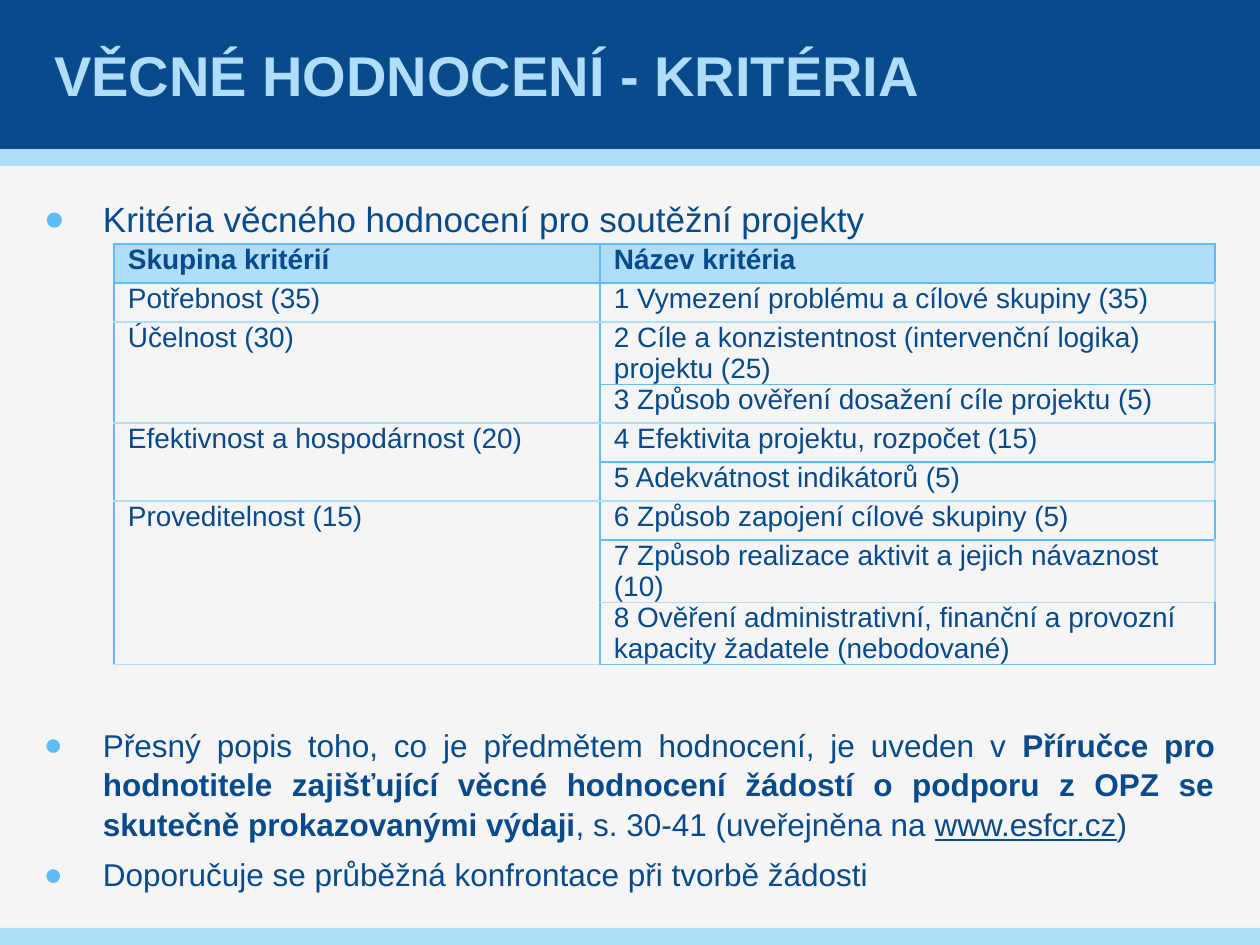
"""Build the slide that lists the evaluation criteria."""
from lxml import etree
from pptx import Presentation, util as u
from pptx.dml import color
from pptx.enum import shapes, text
from pptx.oxml import ns

NAVY, SKY, PALE, PAPER = "084A8B", "5FBBF5", "AFDDFA", "F5F5F5"
EMU_PER_PX = 914400 / 126
GROUPS = [
    ("Skupina kritérií", ["Název kritéria"]),
    ("Potřebnost (35)", ["1 Vymezení problému a cílové skupiny (35)"]),
    ("Účelnost (30)", ["2 Cíle a konzistentnost (intervenční logika) projektu (25)",
                       "3 Způsob ověření dosažení cíle projektu (5)"]),
    ("Efektivnost a hospodárnost (20)", ["4 Efektivita projektu, rozpočet (15)",
                                         "5 Adekvátnost indikátorů (5)"]),
    ("Proveditelnost (15)", ["6 Způsob zapojení cílové skupiny (5)",
                             "7 Způsob realizace aktivit a jejich návaznost (10)",
                             "8 Ověření administrativní, finanční a provozní "
                             "kapacity žadatele (nebodované)"]),
]
BULLETS = [
    (20, 0, text.PP_ALIGN.LEFT,
     [("Kritéria věcného hodnocení pro soutěžní projekty", {})]),
    (18, 274, text.PP_ALIGN.JUSTIFY,
     [("Přesný popis toho, co je předmětem hodnocení, je uveden v ", {}),
      ("Příručce pro hodnotitele zajišťující věcné hodnocení žádostí o podporu "
       "z OPZ se skutečně prokazovanými výdaji", {"bold": True}),
      (", s. 30-41 (uveřejněna na ", {}),
      ("www.esfcr.cz", {"underline": True}),
      (")", {})]),
    (18, 3, text.PP_ALIGN.JUSTIFY,
     [("Doporučuje se průběžná konfrontace při tvorbě žádosti", {})]),
]


def px(length):
    """Turn pixels into EMU."""
    return u.Emu(round(length * EMU_PER_PX))


def rgb(value):
    """Turn a hex string into a colour."""
    return color.RGBColor.from_string(value)


def apply(target, values):
    """Set each attribute named in a dict."""
    for name, value in values.items():
        setattr(target, name, value)


def place(shape, box):
    """Move and size a shape to a pixel box."""
    apply(shape, dict(zip(("left", "top", "width", "height"), map(px, box))))


def add_run(paragraph, words, size, colour=NAVY, **style):
    """Add a formatted run to a paragraph."""
    run = paragraph.add_run()
    run.text = words
    apply(run.font, {"name": "Arial", "size": u.Pt(size), **style})
    run.font.color.rgb = rgb(colour)


def set_frame(frame, sides, anchor):
    """Set wrapping, side insets and anchor of a text frame."""
    apply(frame, {"word_wrap": True, "auto_size": text.MSO_AUTO_SIZE.NONE,
                  "vertical_anchor": anchor, "margin_left": px(sides),
                  "margin_right": px(sides), "margin_top": 0, "margin_bottom": 0})


def add_band(slide, box, fill):
    """Add a plain coloured band."""
    band = slide.shapes.add_shape(shapes.MSO_SHAPE.RECTANGLE, *map(px, box))
    band.shadow.inherit = False
    band.fill.solid()
    band.fill.fore_color.rgb = rgb(fill)
    band.line.fill.background()


def add_header(slide, box):
    """Add the title bar, its stripe and the title."""
    left, top, width, height = box
    add_band(slide, (left, top + height, width, 17), PALE)
    add_band(slide, box, NAVY)
    title = slide.shapes.title
    slide.shapes._spTree.append(title._element)
    place(title, (left + 49, top, 1160, height))
    set_frame(title.text_frame, 5, text.MSO_ANCHOR.MIDDLE)
    paragraph = title.text_frame.paragraphs[0]
    paragraph.alignment = text.PP_ALIGN.LEFT
    add_run(paragraph, "VĚCNÉ HODNOCENÍ - KRITÉRIA", 32, PALE, bold=True)


def set_bullet(paragraph, indent):
    """Give a paragraph a round bullet and a hanging indent."""
    properties = paragraph._p.get_or_add_pPr()
    properties.set("marL", str(px(indent)))
    properties.set("indent", str(-px(indent)))
    bullet_colour = etree.SubElement(properties, ns.qn("a:buClr"))
    etree.SubElement(bullet_colour, ns.qn("a:srgbClr"), val=SKY)
    etree.SubElement(properties, ns.qn("a:buFont"), typeface="Arial")
    etree.SubElement(properties, ns.qn("a:buChar"), char="●")


def add_bullets(slide, box):
    """Add the bullets above and below the table."""
    frame = slide.shapes.add_textbox(*map(px, box)).text_frame
    set_frame(frame, 0, text.MSO_ANCHOR.TOP)
    for index, (size, before, alignment, runs) in enumerate(BULLETS):
        paragraph = frame.add_paragraph() if index else frame.paragraphs[0]
        apply(paragraph, {"alignment": alignment, "line_spacing": 1.05,
                          "space_before": u.Pt(before), "space_after": u.Pt(3)})
        set_bullet(paragraph, 59)
        for words, style in runs:
            add_run(paragraph, words, size, **style)


def set_borders(cell, colours):
    """Draw left, right, top and bottom borders of a cell."""
    properties = cell._tc.get_or_add_tcPr()
    for index, (side, colour) in enumerate(zip(("lnL", "lnR", "lnT", "lnB"), colours)):
        line = etree.Element(ns.qn(f"a:{side}"), w=str(u.Pt(1)))
        fill = etree.SubElement(line, ns.qn("a:solidFill"))
        etree.SubElement(fill, ns.qn("a:srgbClr"), val=colour)
        properties.insert(index, line)


def format_cell(cell, row, column):
    """Set the fill, insets and borders of a cell by its position."""
    apply(cell, {"margin_left": px(14), "margin_right": px(9),
                 "margin_top": 0, "margin_bottom": 0})
    if row == 0:
        cell.fill.solid()
        cell.fill.fore_color.rgb = rgb(PALE)
        colours = (SKY, SKY, SKY, SKY)
    else:
        cell.fill.background()
        if column == 0:
            colours = (SKY, SKY, SKY if row == 1 else PALE, PALE)
        elif row % 2:
            colours = (SKY, PALE, SKY, PALE)
        else:
            colours = (SKY, SKY, PALE, SKY)
    set_borders(cell, colours)


def add_criteria(slide, box):
    """Add the table of criteria by group."""
    count = sum(len(names) for _, names in GROUPS)
    table = slide.shapes.add_table(count, 2, *map(px, box)).table
    apply(table, {"horz_banding": False, "first_row": False})
    for column, width in zip(table.columns, (486, box[2] - 486)):
        column.width = px(width)
    for row in range(count):
        table.rows[row].height = px(39)
        for column in range(2):
            format_cell(table.cell(row, column), row, column)
    row = 0
    for group, names in GROUPS:
        entries = [(row, 0, group)]
        entries += [(row + step, 1, name) for step, name in enumerate(names)]
        for line, column, words in entries:
            paragraph = table.cell(line, column).text_frame.paragraphs[0]
            apply(paragraph, {"space_before": u.Pt(3), "space_after": u.Pt(3)})
            add_run(paragraph, words, 16, bold=line == 0)
        if len(names) > 1:
            table.cell(row, 0).merge(table.cell(row + len(names) - 1, 0))
        row += len(names)


def main():
    """Build and save the presentation."""
    presentation = Presentation()
    apply(presentation, {"slide_width": px(1260), "slide_height": px(945)})
    slide = presentation.slides.add_slide(presentation.slide_layouts[5])
    slide.background.fill.solid()
    slide.background.fill.fore_color.rgb = rgb(PAPER)
    add_header(slide, (0, 0, 1260, 149))
    add_band(slide, (0, 928, 1260, 17), PALE)
    add_bullets(slide, (44, 195, 1171, 714))
    add_criteria(slide, (114, 244, 1101, 351))
    presentation.save("out.pptx")


if __name__ == "__main__":
    main()
